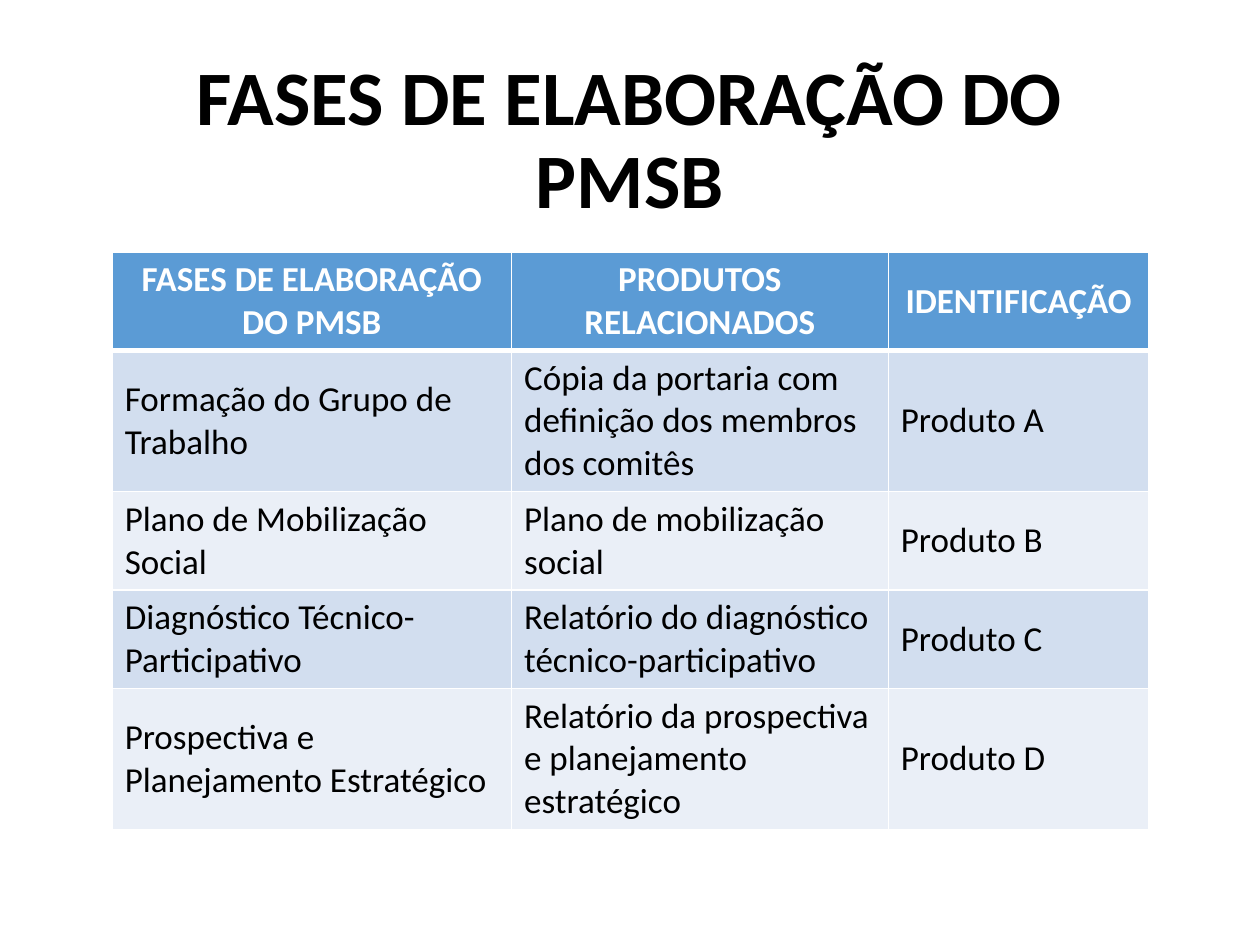
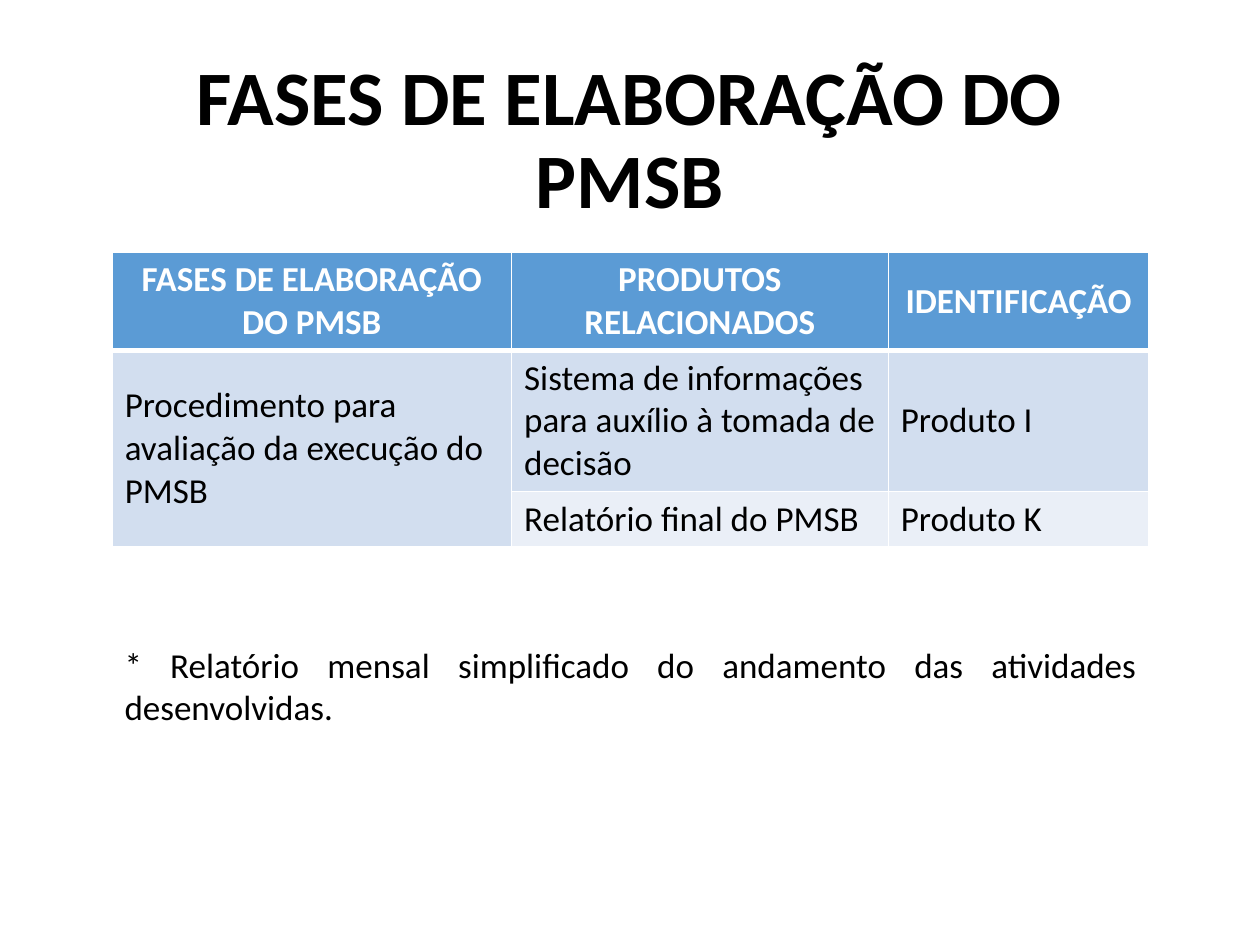
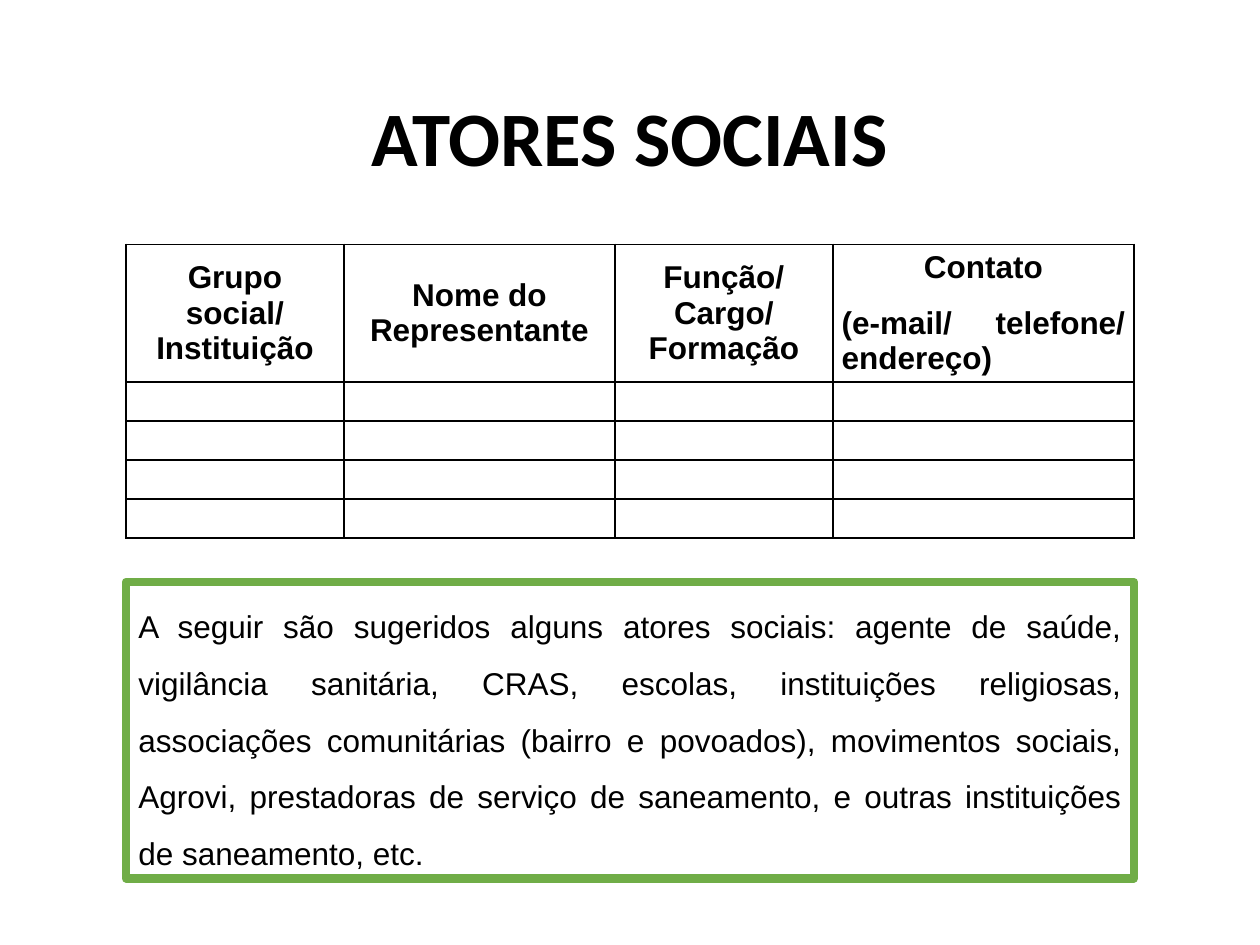
import lxml.etree
import pptx
import pptx.dml.color
import pptx.enum.shapes
import pptx.enum.text
import pptx.oxml.ns
import pptx.util

Inches = pptx.util.Inches
Pt = pptx.util.Pt
ALIGN = pptx.enum.text.PP_ALIGN
ANCHOR = pptx.enum.text.MSO_ANCHOR

BLACK, WHITE = "000000", "FFFFFF"
HEADER_BLUE, GREEN = "5B9BD5", "70AD47"
BANDS = ["D2DEEF", "EAEFF7"]
TITLE_LAYOUT = 5

PHASES_TITLE = "FASES DE ELABORAÇÃO DO PMSB"
PHASES_HEADER = [PHASES_TITLE, "PRODUTOS RELACIONADOS", "IDENTIFICAÇÃO"]
PHASES_COLUMNS = [3.17, 2.99, 2.07]
# Row heights for one, two and three lines of text
ONE_LINE, TWO_LINES, THREE_LINES = 0.44, 0.78, 1.12


def color(hex_string):
    return pptx.dml.color.RGBColor.from_string(hex_string)


def set_border(cell, side, hex_string, width):
    """Draw one cell edge; side is L, R, T or B, and width is in points."""
    properties = cell._tc.get_or_add_tcPr()
    line = lxml.etree.SubElement(properties, pptx.oxml.ns.qn(f"a:ln{side}"), w=str(Pt(width)))
    fill = lxml.etree.SubElement(line, pptx.oxml.ns.qn("a:solidFill"))
    lxml.etree.SubElement(fill, pptx.oxml.ns.qn("a:srgbClr"), val=hex_string)


class Deck:
    def __init__(self):
        self.presentation = pptx.Presentation()
        self.presentation.slide_width = Inches(10)
        self.presentation.slide_height = Inches(7.5)
        self.slide = None

    def add_slide(self, title):
        layout = self.presentation.slide_layouts[TITLE_LAYOUT]
        self.slide = self.presentation.slides.add_slide(layout)
        shape = self.slide.shapes.title
        shape.left, shape.top = Inches(0.69), Inches(0.4)
        shape.width, shape.height = Inches(8.62), Inches(1.45)
        frame = shape.text_frame
        frame.auto_size = pptx.enum.text.MSO_AUTO_SIZE.NONE
        frame.vertical_anchor = ANCHOR.MIDDLE
        self.add_text(frame.paragraphs[0], title, 44, bold=True, align=ALIGN.CENTER,
                      spacing=0.9)

    def add_text(self, paragraph, text, size, font="Calibri", fill=BLACK, bold=False,
                 align=ALIGN.LEFT, spacing=None):
        paragraph.alignment = align
        if spacing:
            paragraph.line_spacing = spacing
        run = paragraph.add_run()
        run.text = text
        run.font.name = font
        run.font.size = Pt(size)
        run.font.bold = bold
        run.font.color.rgb = color(fill)

    def add_table(self, left, top, columns, rows):
        """Add an unfilled table with the given column widths and row heights."""
        frame = self.slide.shapes.add_table(
            len(rows), len(columns), Inches(left), Inches(top),
            Inches(sum(columns)), Inches(sum(rows)))
        table = frame.table
        table.horz_banding = False
        for column, width in zip(table.columns, columns):
            column.width = Inches(width)
        for row, height in zip(table.rows, rows):
            row.height = Inches(height)
        return table

    def add_phases_table(self, body, heights):
        """Add the blue table; None in body joins a cell to the one above."""
        table = self.add_table(0.89, 2, PHASES_COLUMNS, [TWO_LINES] + heights)
        for row, texts in enumerate([PHASES_HEADER] + body):
            is_header = row == 0
            for column, text in enumerate(texts):
                cell = table.cell(row, column)
                for side in "LRTB":
                    under_header = (row, side) in [(0, "B"), (1, "T")]
                    set_border(cell, side, WHITE, 3 if under_header else 1)
                cell.fill.solid()
                cell.fill.fore_color.rgb = color(
                    HEADER_BLUE if is_header else BANDS[(row - 1) % 2])
                cell.vertical_anchor = ANCHOR.MIDDLE
                if text is None:
                    table.cell(row - 1, column).merge(cell)
                    continue
                self.add_text(cell.text_frame.paragraphs[0], text, 20,
                              fill=WHITE if is_header else BLACK, bold=is_header,
                              align=ALIGN.CENTER if is_header else ALIGN.LEFT)

    def add_form_table(self, header, columns, heights):
        """Add a black grid with a header of (text, alignment) paragraphs."""
        table = self.add_table(1, 1.94, columns, heights)
        for cell in table.iter_cells():
            for side in "LRTB":
                set_border(cell, side, BLACK, 1)
            cell.fill.background()
            cell.margin_left = cell.margin_right = Inches(0.07)
            cell.margin_top = cell.margin_bottom = 0
            cell.vertical_anchor = ANCHOR.MIDDLE
        for column, paragraphs in enumerate(header):
            frame = table.cell(0, column).text_frame
            for index, (text, align) in enumerate(paragraphs):
                paragraph = frame.add_paragraph() if index else frame.paragraphs[0]
                if index:
                    paragraph.space_before = Pt(12)
                self.add_text(paragraph, text, 18, font="Arial", bold=True, align=align)

    def add_note(self, text, left, top, width, height):
        box = self.slide.shapes.add_textbox(
            Inches(left), Inches(top), Inches(width), Inches(height))
        box.text_frame.word_wrap = True
        self.add_text(box.text_frame.paragraphs[0], text, 20, align=ALIGN.JUSTIFY)

    def add_framed_text(self, text, left, top, width, height):
        shape = self.slide.shapes.add_shape(
            pptx.enum.shapes.MSO_SHAPE.RECTANGLE,
            Inches(left), Inches(top), Inches(width), Inches(height))
        shape.shadow.inherit = False
        shape.fill.solid()
        shape.fill.fore_color.rgb = color(WHITE)
        shape.line.color.rgb = color(GREEN)
        shape.line.width = Pt(5)
        frame = shape.text_frame
        frame.word_wrap = True
        frame.vertical_anchor = ANCHOR.TOP
        self.add_text(frame.paragraphs[0], text, 18, font="Arial",
                      align=ALIGN.JUSTIFY, spacing=1.5)


def main():
    deck = Deck()

    deck.add_slide(PHASES_TITLE)
    deck.add_phases_table([
        ["Formação do Grupo de Trabalho",
         "Cópia da portaria com definição dos membros dos comitês", "Produto A"],
        ["Plano de Mobilização Social", "Plano de mobilização social", "Produto B"],
        ["Diagnóstico Técnico-Participativo",
         "Relatório do diagnóstico técnico-participativo", "Produto C"],
        ["Prospectiva e Planejamento Estratégico",
         "Relatório da prospectiva e planejamento estratégico", "Produto D"],
    ], [THREE_LINES, TWO_LINES, TWO_LINES, THREE_LINES])

    deck.add_slide(PHASES_TITLE)
    deck.add_phases_table([
        ["Procedimento para avaliação da execução do PMSB",
         "Sistema de informações para auxílio à tomada de decisão", "Produto I"],
        [None, "Relatório final do PMSB", "Produto K"],
    ], [THREE_LINES, ONE_LINE])
    deck.add_note("* Relatório mensal simplificado do andamento das atividades desenvolvidas.",
                  0.89, 5.06, 8.23, 0.77)

    deck.add_slide("ATORES SOCIAIS")
    deck.add_form_table([
        [("Grupo social/ Instituição", ALIGN.CENTER)],
        [("Nome do Representante", ALIGN.CENTER)],
        [("Função/ Cargo/ Formação", ALIGN.CENTER)],
        [("Contato", ALIGN.CENTER), ("(e-mail/ telefone/ endereço)", ALIGN.JUSTIFY)],
    ], [1.73, 2.15, 1.73, 2.39], [1.09] + [0.31] * 4)
    deck.add_framed_text(
        "A seguir são sugeridos alguns atores sociais: agente de saúde, vigilância "
        "sanitária, CRAS, escolas, instituições religiosas, associações comunitárias "
        "(bairro e povoados), movimentos sociais, Agrovi, prestadoras de serviço de "
        "saneamento, e outras instituições de saneamento, etc.",
        1, 4.62, 8, 2.35)

    deck.presentation.save("out.pptx")


if __name__ == "__main__":
    main()
